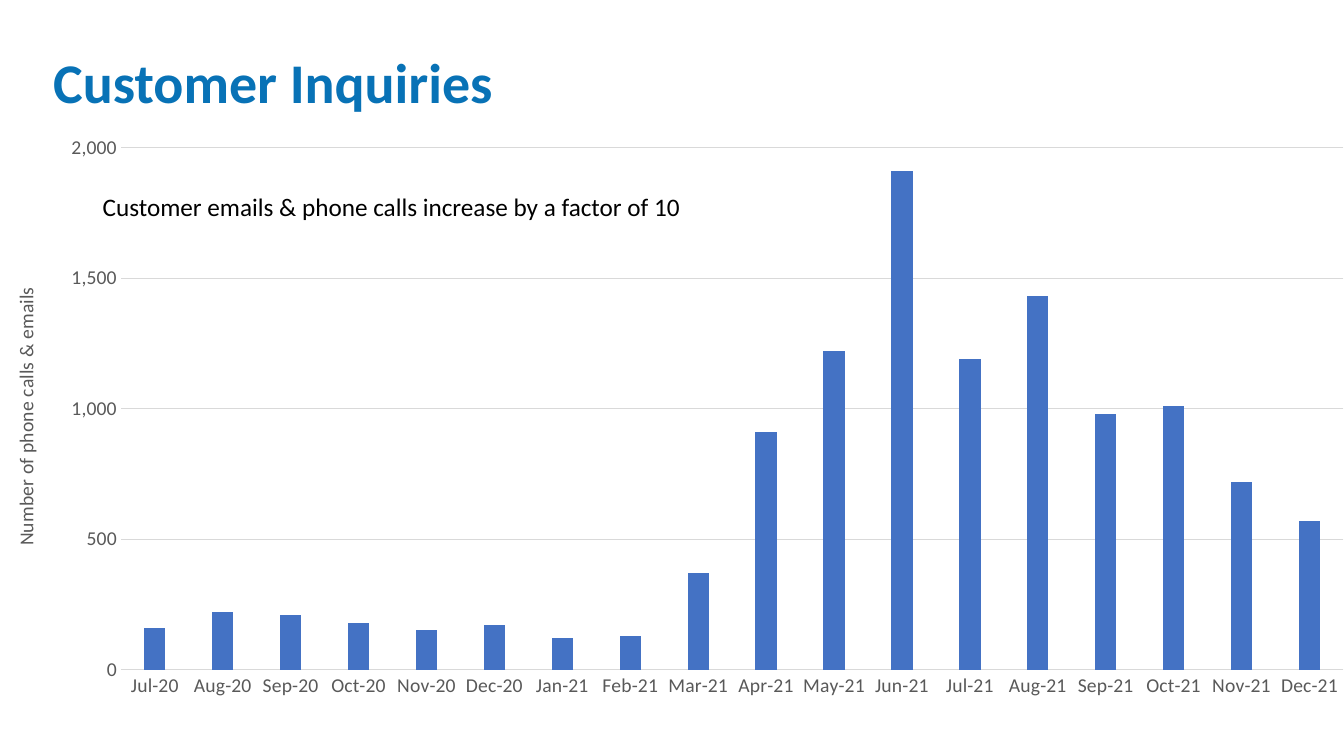
from pptx import Presentation
from pptx.chart.data import CategoryChartData
from pptx.dml.color import RGBColor
from pptx.enum import chart as ch, text
from pptx.oxml import parse_xml
from pptx.oxml.ns import nsdecls
from pptx.util import Inches, Pt

FONT = "Calibri"
TITLE_BLUE = RGBColor(0x08, 0x72, 0xB6)
BAR_BLUE = RGBColor(0x44, 0x72, 0xC4)
BLACK = RGBColor(0, 0, 0)
GRAY = RGBColor(0x59, 0x59, 0x59)
GRID = RGBColor(0xD9, 0xD9, 0xD9)

TITLE = "Customer Inquiries"
NOTE = "Customer emails & phone calls increase by a factor of 10"
AXIS_TITLE = "Number of phone calls & emails"
INQUIRIES = {
    "Jul-20": 160, "Aug-20": 220, "Sep-20": 210, "Oct-20": 180, "Nov-20": 150, "Dec-20": 170,
    "Jan-21": 120, "Feb-21": 130, "Mar-21": 370, "Apr-21": 910, "May-21": 1220, "Jun-21": 1910,
    "Jul-21": 1190, "Aug-21": 1430, "Sep-21": 980, "Oct-21": 1010, "Nov-21": 720, "Dec-21": 570,
}
PLOT = {"x": 0.09, "y": 0.03, "w": 0.91, "h": 0.89}


def style_font(font, size, color, bold=False):
    font.name, font.size, font.bold = FONT, Pt(size), bold
    font.color.rgb = color


def style_line(line):
    line.color.rgb = GRID
    line.width = Pt(0.75)


def add_text(slide, box, words, size, color, bold=False, wrap=True):
    tf = slide.shapes.add_textbox(*map(Inches, box)).text_frame
    tf.word_wrap = wrap
    tf.vertical_anchor = text.MSO_ANCHOR.MIDDLE
    p = tf.paragraphs[0]
    p.text = words
    style_font(p.runs[0].font, size, color, bold)
    return p


def add_inquiry_chart(slide):
    data = CategoryChartData(number_format="#,##0")
    data.categories = list(INQUIRIES)
    data.add_series("Series 1", list(INQUIRIES.values()))
    box = map(Inches, (0, 1.29, 13.33, 5.82))
    chart = slide.shapes.add_chart(ch.XL_CHART_TYPE.COLUMN_CLUSTERED, *box, data).chart
    chart.has_title = chart.has_legend = False
    style_font(chart.font, 14, BLACK)

    plot = chart.plots[0]
    plot.gap_width, plot.overlap, plot.vary_by_categories = 219, -27, False
    fill = plot.series[0].format.fill
    fill.solid()
    fill.fore_color.rgb = BAR_BLUE

    months, counts = chart.category_axis, chart.value_axis
    for axis in (months, counts):
        axis.major_tick_mark = axis.minor_tick_mark = ch.XL_TICK_MARK.NONE
        style_font(axis.tick_labels.font, 14, GRAY)
    style_line(months.format.line)
    counts.format.line.fill.background()
    counts.minimum_scale, counts.maximum_scale, counts.major_unit = 0, 2000, 500
    counts.tick_labels.number_format = "#,##0"
    counts.tick_labels.number_format_is_linked = False
    style_line(counts.major_gridlines.format.line)
    p = counts.axis_title.text_frame.paragraphs[0]
    p.text = AXIS_TITLE
    style_font(p.runs[0].font, 14, GRAY)

    area = chart.element.chart.plotArea
    for old in area.findall("{*}layout"):
        area.remove(old)
    sizes = "".join(f'<c:{key} val="{value}"/>' for key, value in PLOT.items())
    area.insert(0, parse_xml(
        f'<c:layout {nsdecls("c")}><c:manualLayout><c:layoutTarget val="inner"/>'
        f'<c:xMode val="edge"/><c:yMode val="edge"/>{sizes}</c:manualLayout></c:layout>'))


def main():
    prs = Presentation()
    prs.slide_width, prs.slide_height = Inches(13.33), Inches(7.5)
    s = prs.slides.add_slide(prs.slide_layouts[6])
    title = add_text(s, (0.43, 0.12, 11.5, 1.45), TITLE, 40, TITLE_BLUE, bold=True)
    title.line_spacing = 0.9
    add_inquiry_chart(s)
    add_text(s, (0.92, 1.85, 6, 0.4), NOTE, 18, BLACK, wrap=False)
    prs.save("out.pptx")


if __name__ == "__main__":
    main()
